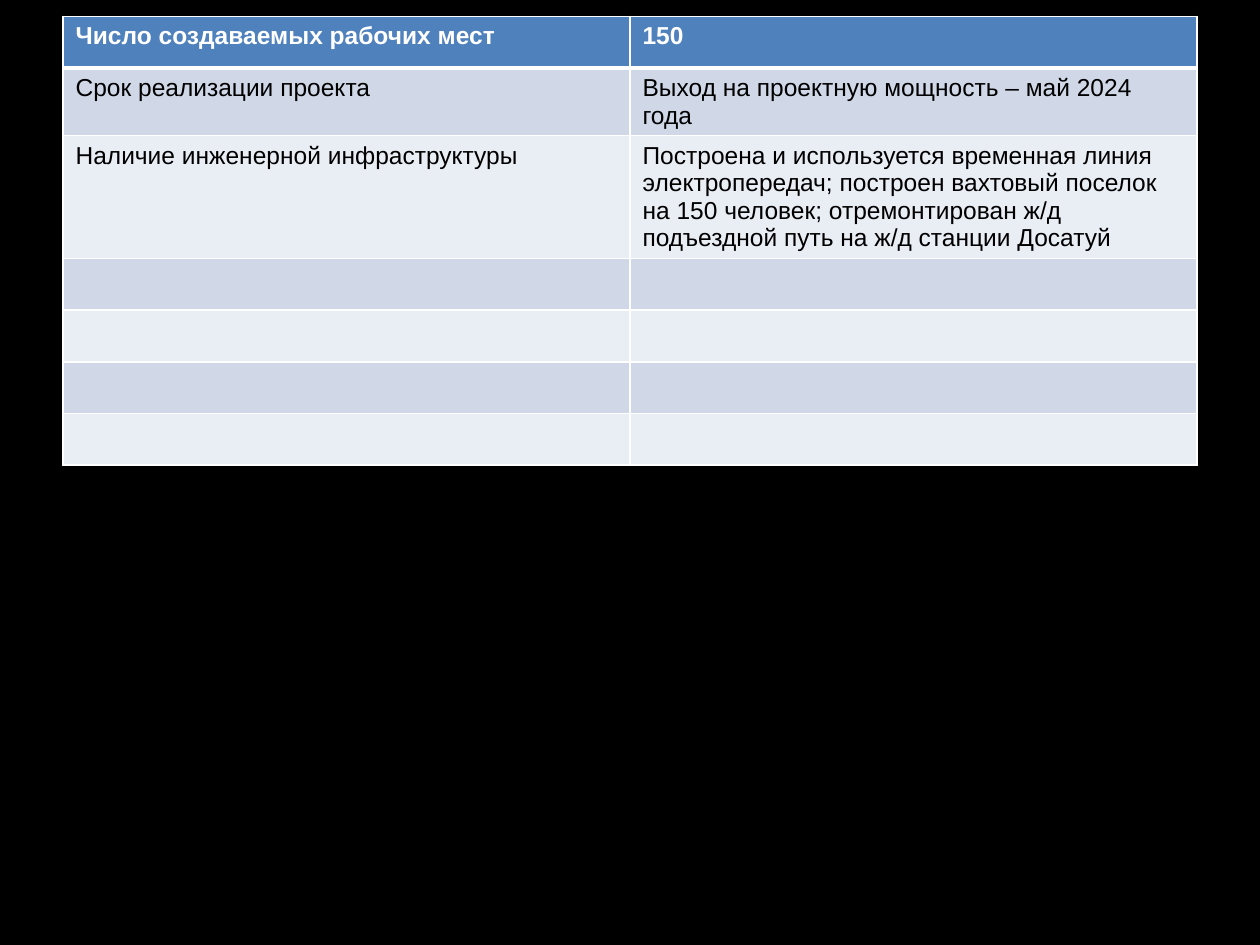
from dataclasses import dataclass

from lxml.etree import SubElement
from pptx import Presentation
from pptx.dml.color import RGBColor
from pptx.oxml.ns import qn
from pptx.util import Inches, Pt


@dataclass(frozen=True)
class Theme:
    """Colours, font, type size and line widths of the slide."""
    font: str = "Arial"
    size: float = 14
    background: str = "000000"
    header: str = "4F81BD"
    header_text: str = "FFFFFF"
    text: str = "000000"
    bands: tuple[str, str] = ("D0D8E8", "E9EDF4")
    border: str = "FFFFFF"
    thin: float = 1
    thick: float = 3


@dataclass(frozen=True)
class Fact:
    """One row of the project table."""
    label: str = ""
    value: str = ""


THEME = Theme()
FACTS = [
    Fact("Число создаваемых рабочих мест", "150"),
    Fact("Срок реализации проекта", "Выход на проектную мощность – май 2024 года"),
    Fact(
        "Наличие инженерной инфраструктуры",
        "Построена и используется временная линия электропередач; "
        "построен вахтовый поселок на 150 человек; отремонтирован ж/д "
        "подъездной путь на ж/д станции Досатуй",
    ),
    *[Fact()] * 4,
]


def write(tf, text: str, *, color: str, bold: bool = False) -> None:
    """Put one formatted run into a text frame."""
    r = tf.paragraphs[0].add_run()
    r.text = text
    r.font.name = THEME.font
    r.font.size = Pt(THEME.size)
    r.font.bold = bold
    r.font.color.rgb = RGBColor.from_string(color)


def set_borders(cell, *, top: float, bottom: float) -> None:
    """Draw the four borders of a cell, with widths in points."""
    tc_pr = cell._tc.get_or_add_tcPr()
    widths = {"L": THEME.thin, "R": THEME.thin, "T": top, "B": bottom}
    for side, width in widths.items():
        ln = SubElement(tc_pr, qn(f"a:ln{side}"), w=str(Pt(width)))
        fill = SubElement(ln, qn("a:solidFill"))
        SubElement(fill, qn("a:srgbClr"), val=THEME.border)


def fill_row(table, i: int, fact: Fact) -> None:
    """Style one table row and write its text."""
    header = i == 0
    fill = THEME.header if header else THEME.bands[(i - 1) % 2]
    for j, text in enumerate((fact.label, fact.value)):
        cell = table.cell(i, j)
        set_borders(
            cell,
            top=THEME.thick if i == 1 else THEME.thin,
            bottom=THEME.thick if header else THEME.thin,
        )
        cell.fill.solid()
        cell.fill.fore_color.rgb = RGBColor.from_string(fill)
        if text:
            color = THEME.header_text if header else THEME.text
            write(cell.text_frame, text, color=color, bold=header)


def add_facts(s, facts: list[Fact]) -> None:
    """Add the two-column project table."""
    row_height = Inches(0.41)
    table = s.shapes.add_table(
        len(facts), 2, Inches(0.5), Inches(0.13), Inches(9), row_height * len(facts)
    ).table
    for i, fact in enumerate(facts):
        table.rows[i].height = row_height
        fill_row(table, i, fact)


def main() -> None:
    """Build and save the slide."""
    prs = Presentation()
    prs.slide_width, prs.slide_height = Inches(10), Inches(7.5)
    s = prs.slides.add_slide(prs.slide_layouts[6])
    s.background.fill.solid()
    s.background.fill.fore_color.rgb = RGBColor.from_string(THEME.background)
    add_facts(s, FACTS)
    prs.save("out.pptx")


if __name__ == "__main__":
    main()
